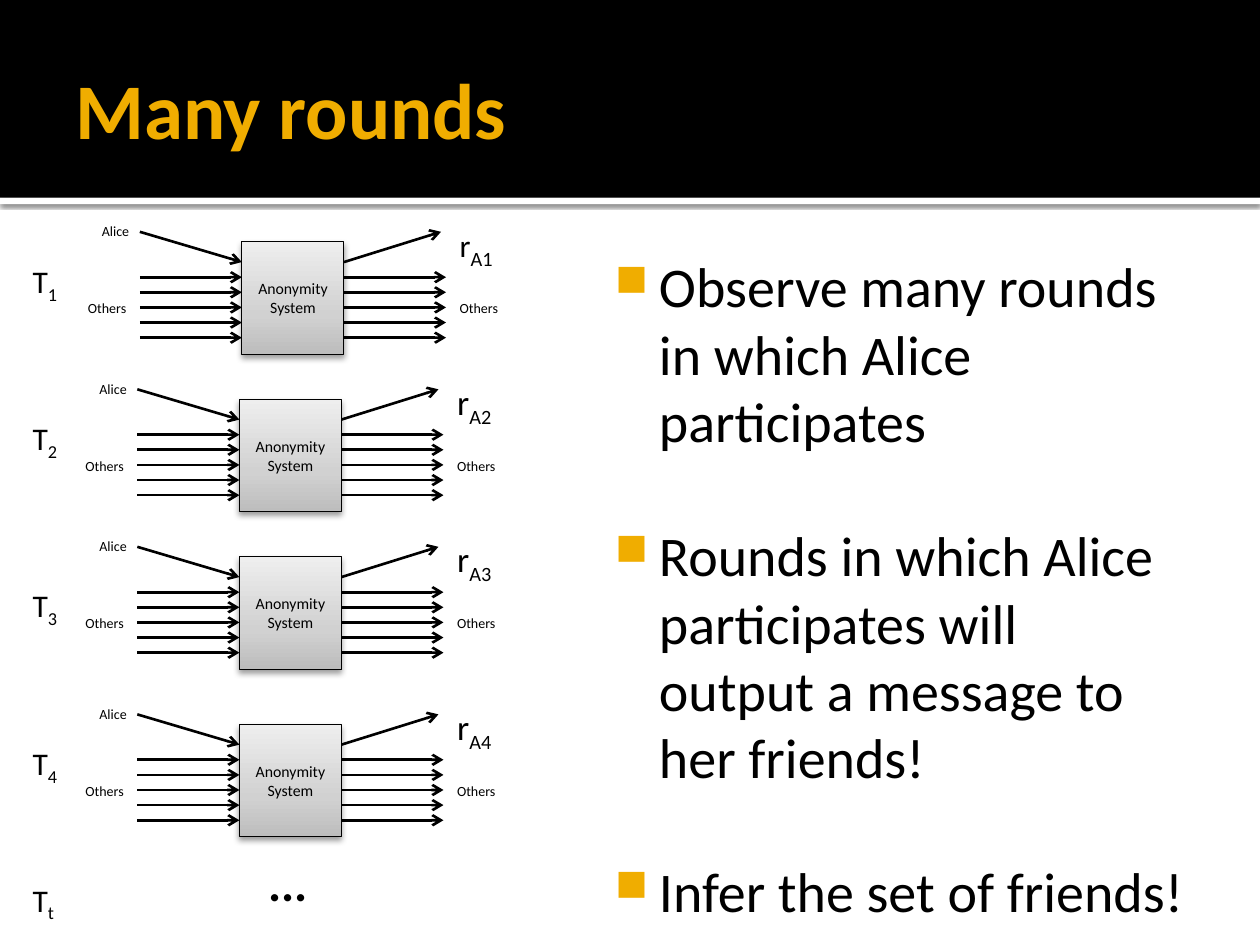
from copy import deepcopy
from lxml import etree
from pptx import Presentation
from pptx.dml.color import RGBColor
from pptx.enum.shapes import MSO_CONNECTOR, MSO_SHAPE
from pptx.enum.text import MSO_ANCHOR, PP_ALIGN
from pptx.oxml.ns import qn
from pptx.util import Inches, Pt

RECT = MSO_SHAPE.RECTANGLE
LINE = MSO_CONNECTOR.STRAIGHT
MID = MSO_ANCHOR.MIDDLE
LEFT, MIDDLE = PP_ALIGN.LEFT, PP_ALIGN.CENTER

HUES = {"black": "000000", "white": "FFFFFF", "gold": "F0AD00"}
SHADES = [(0, "BDBDBD"), (0.35, "D1D1D1"), (1, "EEEEEE")]
TITLE = "Many rounds"
POINTS = [
    "Observe many rounds in which Alice participates",
    "Rounds in which Alice participates will output a message to her friends!",
    "Infer the set of friends!",
]
ROUNDS = [(1.92, 1.92, 18), (1.9, 3.17, 20), (1.9, 4.42, 20), (1.9, 5.75, 20)]
TIMES = [("1", 2.03), ("2", 3.28), ("3", 4.6), ("4", 5.86), ("t", 6.94)]
LABELS = [
    ("Alice", -1.21, -0.2, 0.43, LEFT),
    ("Others", -1.33, 0.41, 0.52, MIDDLE),
    ("Others", 1.62, 0.41, 0.52, MIDDLE),
]
WIDE, HIGH = 0.81, 0.89
LANES = [0.28 + 0.12 * i for i in range(5)]
ARROWS = [(-WIDE, -0.08, 0, 0.16), (WIDE, 0.16, 1.58, -0.08)]
ARROWS += [(x, y, x + WIDE, y) for x in (-WIDE, WIDE) for y in LANES]


def tint(name):
    return RGBColor.from_string(HUES[name])


def apply(target, values):
    for key, value in values.items():
        setattr(target, key, value)


def write(para, text, size, hue="black", bold=False, sub=False):
    run = para.add_run()
    run.text = text
    apply(run.font, {"name": "Calibri", "size": Pt(size), "bold": bold})
    run.font.color.rgb = tint(hue)
    if sub:
        run.font._element.set("baseline", "-25000")


def add_text(shapes, x, y, w, h, wrap=False, **form):
    frame = shapes.add_textbox(*map(Inches, (x, y, w, h))).text_frame
    apply(frame, {"word_wrap": wrap, **form})
    return frame


def add_rect(shapes, x, y, w, h, hue=None):
    rect = shapes.add_shape(RECT, *map(Inches, (x, y, w, h)))
    rect.shadow.inherit = False
    if hue:
        rect.fill.solid()
        rect.fill.fore_color.rgb = tint(hue)
        rect.line.fill.background()
    return rect


def cast(shape, alpha, blur, dist):
    effects = shape._element.spPr.find(qn("a:effectLst"))
    outer = etree.SubElement(
        effects, qn("a:outerShdw"), blurRad=str(Pt(blur)),
        dist=str(Pt(dist)), dir="5400000", rotWithShape="0")
    color = etree.SubElement(outer, qn("a:srgbClr"), val=HUES["black"])
    etree.SubElement(color, qn("a:alpha"), val=str(alpha * 1000))


def shade(fill):
    fill.gradient()
    fill.gradient_angle = 90
    last = fill.gradient_stops[1]._gs
    last.addnext(deepcopy(last))
    for stop, (place, color) in zip(fill.gradient_stops, SHADES):
        stop.position = place
        stop.color.rgb = RGBColor.from_string(color)


def add_arrow(shapes, *ends):
    arrow = shapes.add_connector(LINE, *map(Inches, ends))
    arrow.line.width = Pt(1.5)
    arrow.line.color.rgb = tint("black")
    etree.SubElement(arrow.line._get_or_add_ln(), qn("a:tailEnd"), type="arrow")
    etree.SubElement(arrow._element.spPr, qn("a:effectLst"))


def add_round(shapes, index, left, top, size):
    group = shapes.add_group_shape().shapes
    for x1, y1, x2, y2 in ARROWS:
        add_arrow(group, left + x1, top + y1, left + x2, top + y2)
    for text, x, y, w, align in LABELS:
        para = add_text(group, left + x, top + y, w, 0.24).paragraphs[0]
        para.alignment = align
        write(para, text, 8)
    para = add_text(group, left + 1.63, top - 0.2, 0.5, 0.44).paragraphs[0]
    write(para, "r", size)
    write(para, f"A{index}", 20, sub=True)

    box = add_rect(group, left, top, WIDE, HIGH)
    shade(box.fill)
    box.line.width = Pt(0.5)
    box.line.color.rgb = tint("black")
    cast(box, 38, 3.5, 2)
    frame = box.text_frame
    apply(frame, {"word_wrap": True, "vertical_anchor": MID})
    for para, text in zip((frame.paragraphs[0], frame.add_paragraph()),
                          ("Anonymity", "System")):
        para.alignment = MIDDLE
        write(para, text, 9)


def add_points(shapes):
    frame = add_text(shapes, 4.69, 1.87, 4.81, 5.13, True,
                     margin_left=Inches(0.06), margin_top=Inches(0.13))
    for i, text in enumerate(POINTS):
        para = frame.add_paragraph() if i else frame.paragraphs[0]
        apply(para, {"line_spacing": Pt(38.4), "space_before": Pt(38.4 if i else 0)})
        props = para._p.get_or_add_pPr()
        props.set("marL", str(Inches(0.48)))
        props.set("indent", str(Inches(-0.35)))
        color = etree.SubElement(props, qn("a:buClr"))
        etree.SubElement(color, qn("a:srgbClr"), val=HUES["gold"])
        etree.SubElement(props, qn("a:buSzPct"), val="80000")
        etree.SubElement(props, qn("a:buChar"), char="■")
        write(para, text, 32)


def main():
    deck = Presentation()
    apply(deck, {"slide_width": Inches(10), "slide_height": Inches(7.5)})
    shapes = deck.slides.add_slide(deck.slide_layouts[6]).shapes

    cast(add_rect(shapes, 0, 1.57, 10, 0.05, "white"), 60, 2.5, 0.8)
    add_rect(shapes, 0, 0, 10, 1.57, "black")
    head = add_text(shapes, 0.5, 0.17, 9, 1.37, True, vertical_anchor=MID)
    write(head.paragraphs[0], TITLE, 45, "gold", True)
    add_points(shapes)

    for index, place in enumerate(ROUNDS, 1):
        add_round(shapes, index, *place)
    dots = add_text(shapes, 2.03, 6.72, 0.55, 0.57)
    write(dots.paragraphs[0], "...", 28, bold=True)
    for mark, y in TIMES:
        para = add_text(shapes, 0.16, y, 0.42, 0.4).paragraphs[0]
        write(para, "T", 18)
        write(para, mark, 18, sub=True)

    deck.save("out.pptx")


if __name__ == "__main__":
    main()
